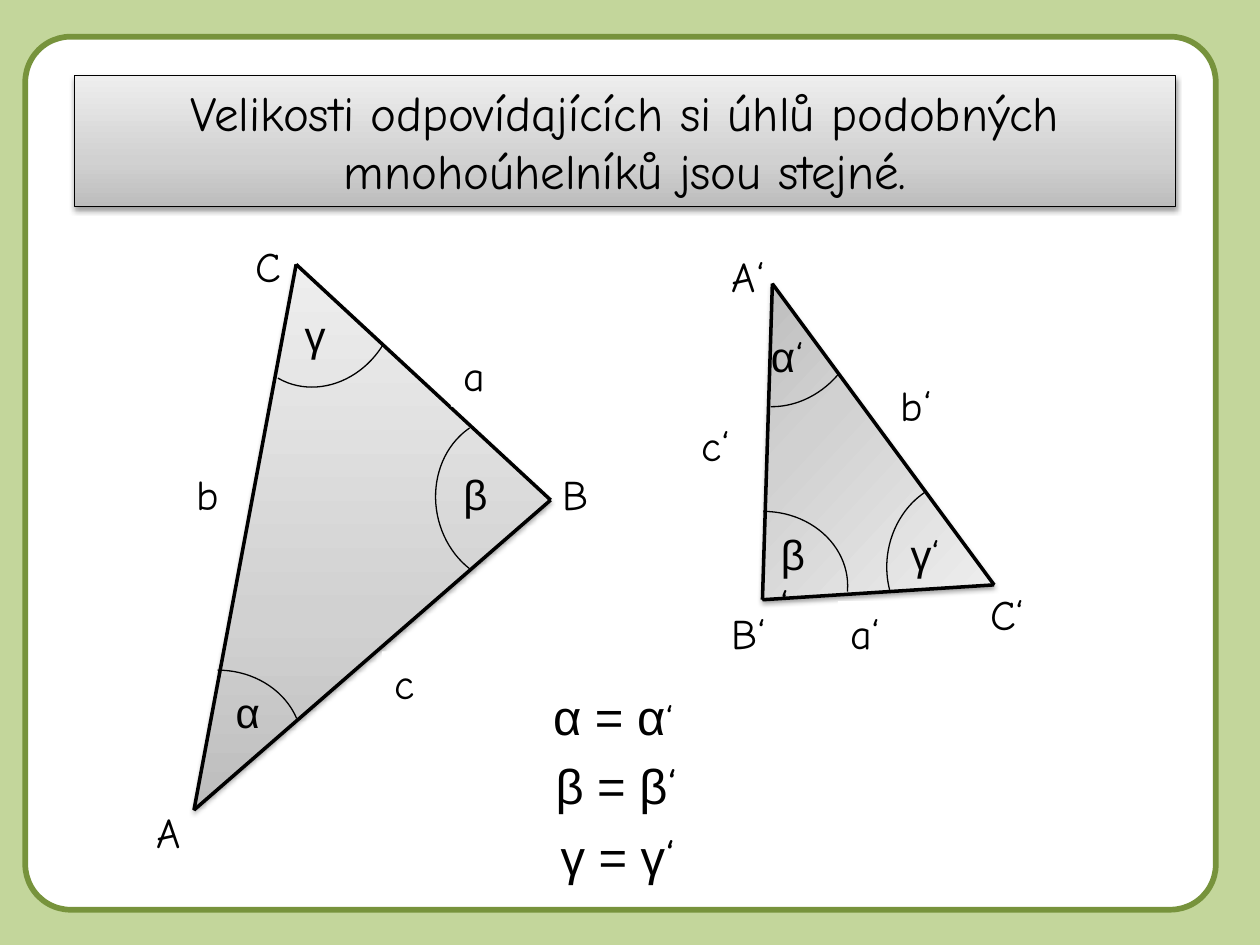
from copy import deepcopy

from lxml.etree import SubElement
from pptx import Presentation
from pptx.dml.color import RGBColor
from pptx.enum.shapes import MSO_CONNECTOR as Connector, MSO_SHAPE as Preset
from pptx.enum.text import MSO_ANCHOR as Anchor, MSO_AUTO_SIZE as AutoSize, PP_ALIGN as Align
from pptx.oxml.ns import qn
from pptx.util import Cm, Pt

HAND, GREEK = "Comic Neue", "Arial"
BLACK, WHITE, LIME, OLIVE = "000000", "FFFFFF", "C3D69B", "77933C"
GREYS = [(0, "BDBDBD"), (0.35, "D1D1D1"), (1, "EEEEEE")]
TITLE = "Velikosti odpovídajících si úhlů podobných mnohoúhelníků jsou stejné."

TRIANGLES = [
    ([(3.91, 16.33), (11.1, 10.08), (5.97, 5.33)], 90),
    ([(15.57, 5.72), (15.37, 12.09), (20.04, 11.79)], 317),
]
VERTEX_LABELS = [
    ("A", 2.9, 16.13, 1.19), ("B", 11.1, 9.32, 0.99), ("C", 4.9, 4.72, 1.04),
    ("A‘", 14.5, 4.93, 1.8), ("B‘", 14.5, 12.12, 1.6), ("C‘", 19.71, 11.73, 1.6),
]
SIDE_LABELS = [
    ("a", 9.09, 6.93, 1.04), ("b", 3.71, 9.32, 0.99), ("c", 7.7, 13.13, 1.04),
    ("a‘", 16.89, 12.12, 1.8), ("b‘", 17.91, 7.52, 1.6), ("c‘", 13.89, 8.33, 1.4),
]
ARCS = [
    (2.69, 13.51, 0, 162, 205.05), (4.75, 4.65, 119.2, 163.6, 0.49),
    (8.59, 8.59, 258.9, 133.26, 205.05), (13.69, 10.31, 0, 162, 2.38),
    (14.05, 5.08, 130.3, 162, 196.3), (17.68, 9.88, 276.8, 145.91, 195.55),
]
ANGLE_LABELS = [
    ("α", "", 4.5, 13.72, 1.04, False), ("β", "", 9.09, 9.32, 1.22, True),
    ("γ", "", 5.89, 6.12, 1.22, True), ("α", "‘", 15.29, 6.53, 1.22, False),
    ("β", "‘", 15.49, 10.52, 1.14, True), ("γ", "‘", 18.11, 10.52, 1.22, True),
]
EQUATIONS = [
    ("α = α", 24, 10.9, 13.72, 3.18, False),
    ("β = β", 28, 10.95, 15.11, 3.61, True),
    ("γ = γ", 28, 11.05, 16.54, 3.4, True),
]


def rgb(value):
    return RGBColor.from_string(value)


def outline(shape, color, width):
    shape.line.color.rgb = rgb(color)
    shape.line.width = Pt(width)


def shade(shape, angle):
    shape.fill.gradient()
    shape.fill.gradient_angle = angle
    stops = shape._element.spPr.find(".//" + qn("a:gsLst"))
    stops.append(deepcopy(stops[0]))
    for stop, (position, color) in zip(shape.fill.gradient_stops, GREYS):
        stop.position = position
        stop.color.rgb = rgb(color)
    outline(shape, BLACK, 0.75)
    effects = SubElement(shape._element.spPr, qn("a:effectLst"))
    shadow = SubElement(effects, qn("a:outerShdw"), blurRad=str(Pt(3.1)),
                        dist=str(Pt(1.6)), dir="5400000", rotWithShape="0")
    tint = SubElement(shadow, qn("a:srgbClr"), val=BLACK)
    SubElement(tint, qn("a:alpha"), val="38000")


def style(span, font, size):
    span.font.name = font
    span.font.size = Pt(size)
    span.font.color.rgb = rgb(BLACK)


def label(page, spans, left, top, width, height=1.27, wrap=True):
    box = page.shapes.add_textbox(Cm(left), Cm(top), Cm(width), Cm(height))
    box.text_frame.word_wrap = wrap
    box.text_frame.auto_size = AutoSize.SHAPE_TO_FIT_TEXT
    para = box.text_frame.paragraphs[0]
    for text, font, size in spans:
        span = para.add_run()
        span.text = text
        style(span, font, size)
    return box


def add_panel(page):
    panel = page.shapes.add_shape(Preset.ROUNDED_RECTANGLE, Cm(0.51), Cm(0.74), Cm(24), Cm(17.6))
    panel.adjustments[0] = 0.052
    panel.shadow.inherit = False
    panel.fill.solid()
    panel.fill.fore_color.rgb = rgb(WHITE)
    outline(panel, OLIVE, 3.25)


def add_title(page):
    title = page.shapes.title
    page.shapes._spTree.append(title._element)
    title.left, title.top, title.width, title.height = Cm(1.5), Cm(1.52), Cm(22.2), Cm(2.64)
    frame = title.text_frame
    frame.text = TITLE
    frame.word_wrap = True
    frame.auto_size = AutoSize.SHAPE_TO_FIT_TEXT
    frame.vertical_anchor = Anchor.MIDDLE
    para = frame.paragraphs[0]
    para.alignment = Align.CENTER
    style(para.runs[0], HAND, 28)
    shade(title, 90)


def add_triangle(page, corners, angle):
    points = [(Cm(x), Cm(y)) for x, y in corners]
    builder = page.shapes.build_freeform(*points[0])
    builder.add_line_segments(points[1:], close=True)
    triangle = builder.convert_to_shape()
    shade(triangle, angle)
    for start, end in zip(points, points[1:] + points[:1]):
        side = page.shapes.add_connector(Connector.STRAIGHT, *start, *end)
        outline(side, BLACK, 2)
        SubElement(side._element.spPr, qn("a:effectLst"))


def add_arc(page, left, top, rotation, start, end):
    arc = page.shapes.add_shape(Preset.ARC, Cm(left), Cm(top), Cm(3.4), Cm(3))
    arc.rotation = rotation
    arc.adjustments[0], arc.adjustments[1] = start, end
    arc.shadow.inherit = False
    arc.fill.background()
    outline(arc, BLACK, 0.75)


def main():
    deck = Presentation()
    deck.slide_width, deck.slide_height = Cm(25.4), Cm(19.05)
    page = deck.slides.add_slide(deck.slide_layouts[5])
    page.background.fill.solid()
    page.background.fill.fore_color.rgb = rgb(LIME)
    add_panel(page)
    add_title(page)
    for text, *place in VERTEX_LABELS:
        label(page, [(text, HAND, 24)], *place)
    for corners, angle in TRIANGLES:
        add_triangle(page, corners, angle)
    for text, *place in SIDE_LABELS:
        box = label(page, [(text, HAND, 24)], *place)
        box.fill.solid()
        box.fill.fore_color.rgb = rgb(WHITE)
    for arc in ARCS:
        add_arc(page, *arc)
    for letter, prime, *place, wrap in ANGLE_LABELS:
        spans = [(letter, GREEK, 24)] + ([(prime, HAND, 24)] if prime else [])
        label(page, spans, *place, wrap=wrap)
    for text, prime_size, *place, wrap in EQUATIONS:
        label(page, [(text, GREEK, 28), ("‘", HAND, prime_size)], *place, height=1.45, wrap=wrap)
    deck.save("out.pptx")


if __name__ == "__main__":
    main()
